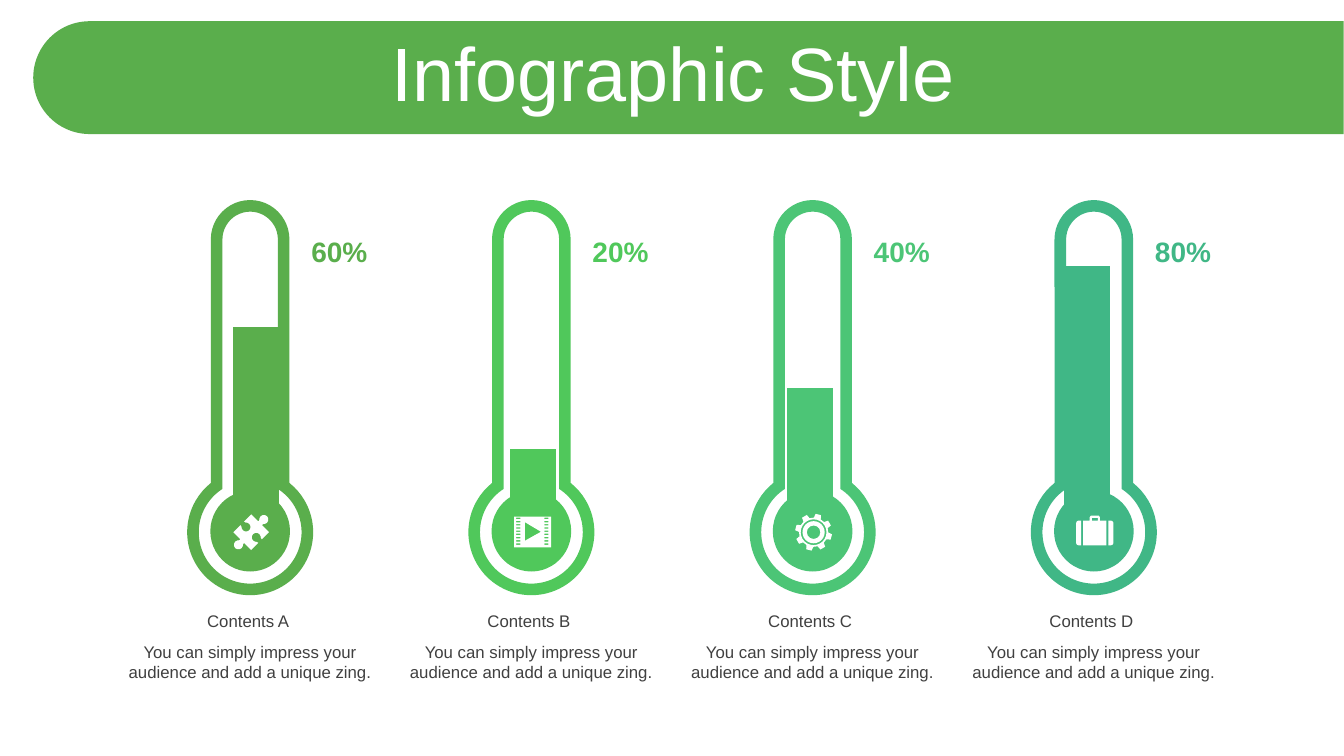
import math
from dataclasses import dataclass
from typing import Callable

from pptx import Presentation
from pptx import util as u
from pptx.chart.data import CategoryChartData
from pptx.dml.color import RGBColor
from pptx.enum import chart as charts, shapes, text
from pptx.oxml import parse_xml
from pptx.oxml.ns import nsdecls, qn


@dataclass(frozen=True)
class Node:
    """Corner of an outline, reached by an arc when it has a radius."""
    x: float
    y: float
    radius: float = 0
    start: float = 0
    sweep: float = 0


Outline = list[Node]


@dataclass(frozen=True)
class Theme:
    font: str = "Arial"
    banner: str = "5AAE4C"
    light: str = "FFFFFF"
    body: str = "404040"
    title_size: int = 54
    percent_size: int = 20
    body_size: int = 12
    chart_size: int = 10


@dataclass(frozen=True)
class Thermometer:
    letter: str
    percent: str
    level: int
    color: str
    icon: Callable[[], list[Outline]]
    turn: int = 0


THEME = Theme()
BLURB = "You can simply impress your audience and add a unique zing."

# Grid: square cells of 0.1 inch, four equal columns centred on the slide
WIDTH, HEIGHT = 133.33, 75
COLUMN = 27.9
BULB_ROW, STEM_ROW = 52.8, 23.75


def cells(count: float) -> u.Emu:
    return u.Emu(round(count * u.Inches(0.1)))


def column_centre(index: int) -> float:
    return WIDTH / 2 + (index - 1.5) * COLUMN


# Outlines, in cells around the centre of the bulb
def polar(radius: float, angle: float) -> Node:
    turn = math.radians(angle)
    return Node(radius * math.cos(turn), radius * math.sin(turn))


def arc(x: float, y: float, radius: float, start: float, end: float) -> Outline:
    """Arc cut at each quarter, so that its corners reach its full extent."""
    low, high = sorted((start, end))
    cuts = [a for a in range(-360, 721, 90) if low < a < high]
    stops = [start, *sorted(cuts, reverse=start > end), end]
    ends = [polar(radius, stop) for stop in stops]
    return [Node(x + ends[0].x, y + ends[0].y)] + [
        Node(x + node.x, y + node.y, radius, a, b - a)
        for node, a, b in zip(ends[1:], stops, stops[1:])]


def polygon(*points: tuple[float, float]) -> Outline:
    return [Node(x, y) for x, y in points]


def rectangle(left: float, top: float, width: float, height: float) -> Outline:
    right, bottom = left + width, top + height
    return polygon((left, top), (right, top), (right, bottom), (left, bottom))


def tube(stem: float, bulb: float) -> Outline:
    joint = math.degrees(math.asin(stem / bulb))
    return (arc(0, STEM_ROW - BULB_ROW, stem, 180, 360)
            + arc(0, 0, bulb, joint - 90, 270 - joint))


def puzzle() -> list[Outline]:
    side, neck = 1.25, 0.25
    lean = math.degrees(math.atan(neck / side))
    piece: Outline = []
    for quarter in range(4):
        out = 1 if quarter % 2 == 0 else -1
        turn = 90 * quarter
        knob = polar(side + out * 0.53, turn - 90)
        start, end = (130, 410) if out == 1 else (230, -50)
        piece += [polar(math.hypot(side, side), turn - 135),
                  polar(math.hypot(side, neck), turn - 90 - lean),
                  *arc(knob.x, knob.y, 0.45, start + turn, end + turn),
                  polar(math.hypot(side, neck), turn - 90 + lean)]
    return [piece]


def film() -> list[Outline]:
    holes = [rectangle(left, -1.45 + 0.32 * n, 0.4, 0.14)
             for n in range(9) for left in (-1.6, 1.2)]
    play = polygon((-0.75, -1), (-0.75, 0.85), (0.85, -0.05))
    return [rectangle(-1.8, -1.55, 3.65, 3.05), play, *holes]


def gear() -> list[Outline]:
    profile = ((1.45, -14), (1.84, -8.5), (1.84, 8.5), (1.45, 14))
    teeth = [polar(radius, 45 * tooth - 75 + offset)
             for tooth in range(8) for radius, offset in profile]
    return [teeth] + [arc(0, 0, radius, 0, 360) for radius in (1.28, 1.1, 0.67)]


def suitcase() -> list[Outline]:
    top, bottom, corner = -1.15, 1.3, 0.25
    right = [Node(1.35, top), *arc(1.6, top + corner, corner, -90, 0),
             *arc(1.6, bottom - corner, corner, 0, 90), Node(1.35, bottom)]
    left = [Node(-1.35, bottom), *arc(-1.6, bottom - corner, corner, 90, 180),
            *arc(-1.6, top + corner, corner, 180, 270), Node(-1.35, top)]
    body = polygon((-1.15, top), (-0.5, top), (-0.5, -1.5), (-0.38, -1.65), (0.38, -1.65),
                   (0.5, -1.5), (0.5, top), (1.15, top), (1.15, bottom), (-1.15, bottom))
    return [right, left, body, rectangle(-0.3, -1.42, 0.6, 0.27)]


# Drawing
def paint(shape, color: str) -> None:
    shape.shadow.inherit = False
    shape.fill.solid()
    shape.fill.fore_color.rgb = RGBColor.from_string(color)
    shape.line.fill.background()


def draw_outlines(holder, outlines: list[Outline], x: float, y: float, color: str):
    placed = [[(cells(x + n.x), cells(y + n.y)) for n in outline] for outline in outlines]
    builder = holder.build_freeform(*placed[0][0], scale=1.0)
    for number, points in enumerate(placed):
        if number:
            builder.move_to(*points[0])
        builder.add_line_segments(points[1:], close=True)
    shape = builder.convert_to_shape()
    # Bend the segments that are arcs
    nodes = [node for outline in outlines for node in outline[1:]]
    for node, segment in zip(nodes, list(shape.element.iter(qn("a:lnTo")))):
        if node.radius:
            radius = cells(node.radius)
            start, sweep = round(node.start % 360 * 60000), round(node.sweep * 60000)
            segment.getparent().replace(segment, parse_xml(
                f'<a:arcTo {nsdecls("a")} wR="{radius}" hR="{radius}" '
                f'stAng="{start}" swAng="{sweep}"/>'))
    paint(shape, color)
    return shape


def write(holder, words: str, left: float, top: float, width: float, height: float,
          size: int, color: str, bold: bool = False):
    box = holder.add_textbox(*map(cells, (left, top, width, height)))
    box.text_frame.word_wrap = True
    para = box.text_frame.paragraphs[0]
    para.text = words
    para.alignment = text.PP_ALIGN.CENTER
    para.font.name, para.font.size, para.font.bold = THEME.font, u.Pt(size), bold
    para.font.color.rgb = RGBColor.from_string(color)
    return box


def draw_banner(page) -> None:
    banner = page.shapes.add_shape(shapes.MSO_SHAPE.ROUND_2_SAME_RECTANGLE,
                                   *map(cells, (62.7, -57.3, 11.2, 130)))
    banner.adjustments[0], banner.adjustments[1] = 0.5, 0
    banner.rotation = 270
    paint(banner, THEME.banner)
    title = write(page.shapes, "Infographic Style", 3.5, 3.7, 126.6, 7.9,
                  THEME.title_size, THEME.light)
    title.text_frame.vertical_anchor = text.MSO_ANCHOR.MIDDLE
    para = title.text_frame.paragraphs[0]
    para.line_spacing, para.space_before = 0.9, u.Pt(10)


def draw_levels(page, items: list[Thermometer]) -> None:
    data = CategoryChartData()
    data.categories = [str(n + 1) for n in range(len(items))]
    data.add_series("Series 1", [item.level for item in items])
    chart = page.shapes.add_chart(charts.XL_CHART_TYPE.COLUMN_CLUSTERED,
                                  *map(cells, (9.4, 22.7, 114.5, 28.5)), data).chart
    chart.has_legend = chart.has_title = False
    chart.font.name, chart.font.size = THEME.font, u.Pt(THEME.chart_size)
    chart.font.color.rgb = RGBColor(0, 0, 0)
    chart.value_axis.minimum_scale, chart.value_axis.maximum_scale = 0, 100
    chart.value_axis.has_major_gridlines = False
    chart.value_axis.visible = chart.category_axis.visible = False
    plot = chart.plots[0]
    plot.gap_width, plot.vary_by_categories = 500, False
    for index, item in enumerate(items):
        fill = plot.series[0].points[index].format.fill
        fill.solid()
        fill.fore_color.rgb = RGBColor.from_string(item.color)
    # Fixed plot area, as shares of the chart
    area = chart.element.find(".//" + qn("c:plotArea"))
    for layout in area.findall(qn("c:layout")):
        area.remove(layout)
    places = "".join(f'<c:{tag} val="{share}"/>' for tag, share in
                     (("x", 0.02), ("y", 0.13), ("w", 0.96), ("h", 0.85)))
    area.insert(0, parse_xml(
        f'<c:layout {nsdecls("c")}><c:manualLayout><c:layoutTarget val="inner"/>'
        f'<c:xMode val="edge"/><c:yMode val="edge"/>{places}</c:manualLayout></c:layout>'))


def draw_thermometer(page, item: Thermometer, centre: float) -> None:
    glass = page.shapes.add_group_shape().shapes
    draw_outlines(glass, [tube(3.9, 6.25), tube(2.75, 5.1)], centre, BULB_ROW, item.color)
    bulb = glass.add_shape(shapes.MSO_SHAPE.OVAL, *map(cells, (centre - 3.95, 48.7, 7.9, 8)))
    paint(bulb, item.color)
    icon = draw_outlines(page.shapes, item.icon(), centre + 0.1, BULB_ROW, THEME.light)
    icon.rotation = item.turn
    write(page.shapes, item.percent, centre + 4.05, 22.8, 9.6, 4.4,
          THEME.percent_size, item.color, bold=True)
    caption = page.shapes.add_group_shape().shapes
    for words, top, height in ((f"Contents {item.letter} ", 60.1, 3), (BLURB, 63.2, 5)):
        write(caption, words, centre - 13.5, top, 27, height, THEME.body_size, THEME.body)


def main() -> None:
    deck = Presentation()
    deck.slide_width, deck.slide_height = cells(WIDTH), cells(HEIGHT)
    page = deck.slides.add_slide(deck.slide_layouts[6])
    items = [Thermometer("A", "60%", 75, "5AAE4C", puzzle, turn=45),
             Thermometer("B", "20%", 25, "50C85B", film),
             Thermometer("C", "40%", 50, "4CC576", gear),
             Thermometer("D", "80%", 100, "40B786", suitcase)]
    draw_banner(page)
    draw_levels(page, items)
    for index, item in enumerate(items):
        draw_thermometer(page, item, column_centre(index))
    deck.save("out.pptx")


if __name__ == "__main__":
    main()
